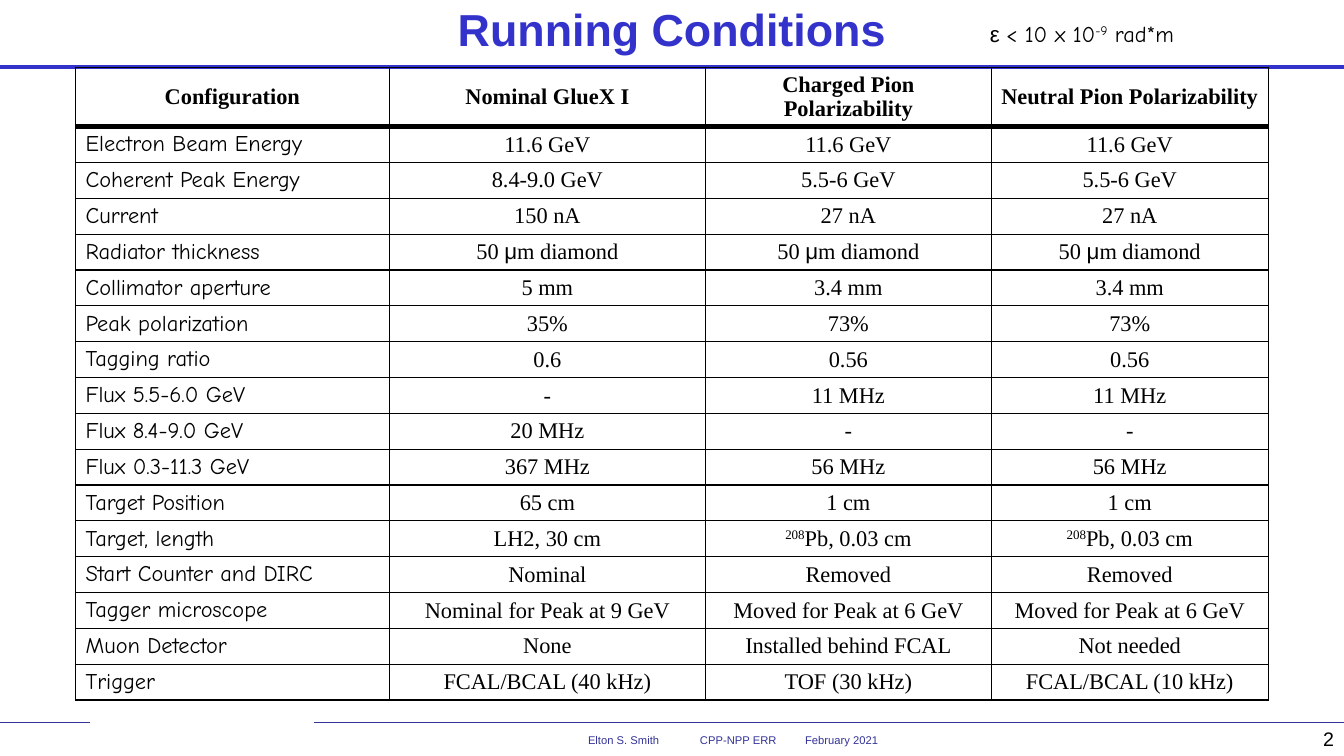
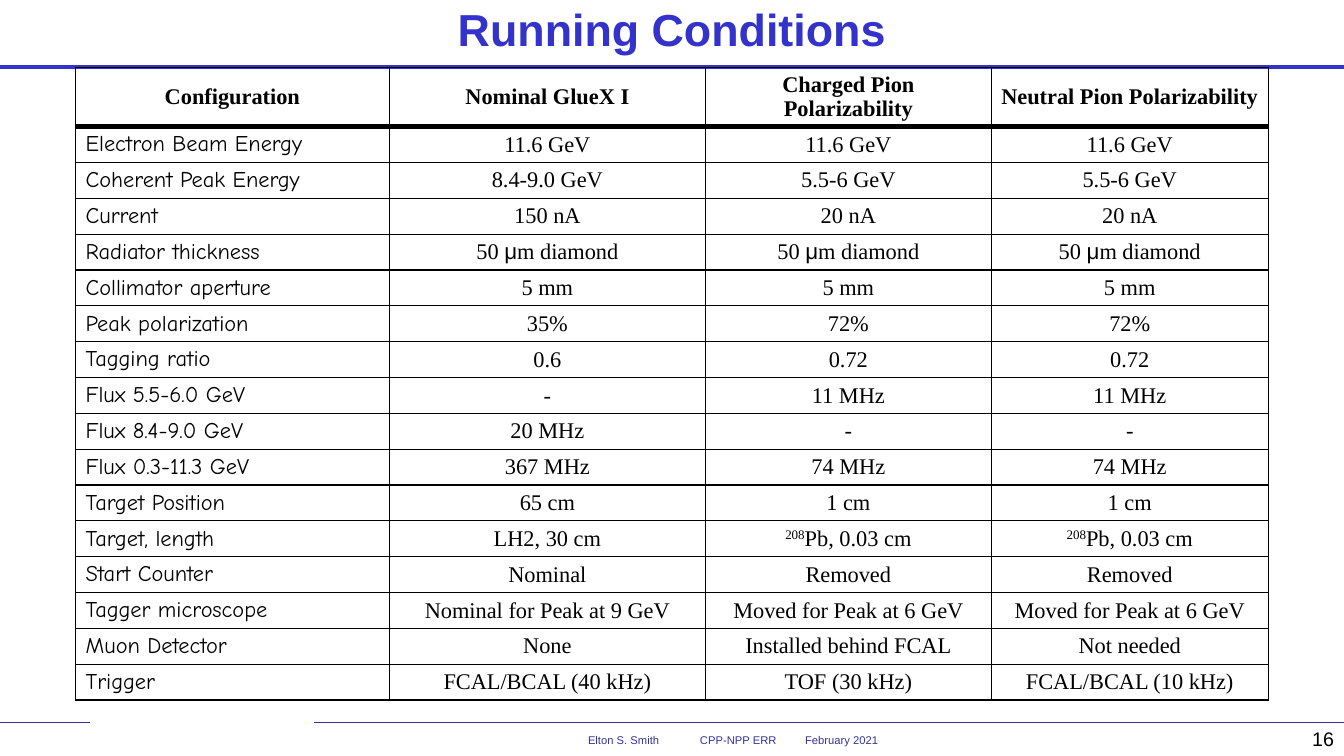
from dataclasses import dataclass

from lxml.etree import SubElement
from pptx import Presentation
from pptx.dml.color import RGBColor
from pptx.enum.shapes import MSO_CONNECTOR
from pptx.enum.text import MSO_ANCHOR, MSO_AUTO_SIZE, PP_ALIGN
from pptx.oxml.ns import qn
from pptx.util import Pt


@dataclass(frozen=True)
class Theme:
    title_blue: RGBColor = RGBColor(0x33, 0x33, 0xCC)
    footer_blue: RGBColor = RGBColor(0x33, 0x33, 0x99)
    ink: RGBColor = RGBColor(0, 0, 0)
    sans: str = "Arial"
    serif: str = "Times New Roman"
    hand: str = "Comic Neue"
    title_size: int = 32
    table_size: int = 16
    number_size: int = 14
    footer_size: int = 8
    grid_width: float = 1
    header_rule_width: float = 4.5


@dataclass(frozen=True)
class Box:
    left: float
    top: float
    width: float
    height: float

    def lengths(self):
        return [Pt(value) for value in (self.left, self.top, self.width, self.height)]


@dataclass(frozen=True)
class Piece:
    text: str
    font: str = ""
    raised: bool = False


@dataclass(frozen=True)
class PionRun:
    number: str
    current: str
    aperture: str
    polarization: str
    tagging: str
    full_flux: str
    start_counter: str
    emittance: tuple = ()


THEME = Theme()
PAGE = Box(0, 0, 960, 540)
TITLE = Box(0, -3.6, 960, 48)
EMITTANCE = Box(700, 11, 152.6, 26.6)
CONDITIONS = Box(54, 48, 852, 452.1)
FOOTER = Box(320, 520, 408, 17.3)
PAGE_NUMBER = Box(760, 516, 200, 24)

COLUMN_WIDTHS = (224, 226, 204, 198)
HEADER_HEIGHT = 42.5
HEADINGS = (
    "Configuration",
    "Nominal GlueX I",
    "Charged Pion\nPolarizability",
    "Neutral Pion Polarizability",
)
DIAMOND = (Piece("50 "), Piece("μ", THEME.sans), Piece("m diamond"))
LEAD = (Piece("208", raised=True), Piece("Pb, 0.03 cm"))
BEAM_EMITTANCE = (
    Piece("ε ", THEME.sans),
    Piece("< 10 x 10"),
    Piece("-9", raised=True),
    Piece(" rad*m"),
)
PION_RUNS = (
    PionRun("2", "27 nA", "3.4 mm", "73%", "0.56", "56 MHz",
            "Start Counter and DIRC", BEAM_EMITTANCE),
    PionRun("16", "20 nA", "5 mm", "72%", "0.72", "74 MHz", "Start Counter"),
)


def condition_rows(run):
    def pions(label, nominal, value):
        return label, nominal, value, value

    return (
        HEADINGS,
        pions("Electron Beam Energy", "11.6 GeV", "11.6 GeV"),
        pions("Coherent Peak Energy", "8.4-9.0 GeV", "5.5-6 GeV"),
        pions("Current", "150 nA", run.current),
        pions("Radiator thickness", DIAMOND, DIAMOND),
        pions("Collimator aperture", "5 mm", run.aperture),
        pions("Peak polarization", "35%", run.polarization),
        pions("Tagging ratio", "0.6", run.tagging),
        pions("Flux 5.5-6.0 GeV", "-", "11 MHz"),
        pions("Flux 8.4-9.0 GeV", "20 MHz", "-"),
        pions("Flux 0.3-11.3 GeV", "367 MHz", run.full_flux),
        pions("Target Position", "65 cm", "1 cm"),
        pions("Target, length", "LH2, 30 cm", LEAD),
        pions(run.start_counter, "Nominal", "Removed"),
        pions("Tagger microscope", "Nominal for Peak at 9 GeV", "Moved for Peak at 6 GeV"),
        ("Muon Detector", "None", "Installed behind FCAL", "Not needed"),
        ("Trigger", "FCAL/BCAL (40 kHz)", "TOF (30 kHz)", "FCAL/BCAL (10 kHz)"),
    )


def apply_format(target, values):
    for attribute, value in values.items():
        setattr(target, attribute, value)


def write(paragraph, content, font, size, color, bold=False, align=PP_ALIGN.LEFT):
    paragraph.alignment = align
    for piece in (Piece(content),) if isinstance(content, str) else content:
        run = paragraph.add_run()
        run.text = piece.text
        apply_format(run.font, {"name": piece.font or font, "size": Pt(size), "bold": bold})
        run.font.color.rgb = color
        if piece.raised:
            run.font._element.set("baseline", "30000")


def add_text_frame(slide, box, wrap=True):
    frame = slide.shapes.add_textbox(*box.lengths()).text_frame
    apply_format(frame, {"word_wrap": wrap, "auto_size": MSO_AUTO_SIZE.NONE})
    return frame


def add_rule(slide, start, end, height, color, width):
    rule = slide.shapes.add_connector(
        MSO_CONNECTOR.STRAIGHT, Pt(start), Pt(height), Pt(end), Pt(height))
    rule.line.color.rgb = color
    rule.line.width = Pt(width)
    SubElement(rule.element.spPr, qn("a:effectLst"))


def add_footer(slide, box):
    frame = add_text_frame(slide, box)
    frame.margin_left = Pt(100)
    paragraph = frame.paragraphs[0]
    tabs = SubElement(paragraph._p.get_or_add_pPr(), qn("a:tabLst"))
    for position in (80, 155):
        SubElement(tabs, qn("a:tab"), pos=str(Pt(position)), algn="l")
    write(paragraph, "Elton S. Smith\tCPP-NPP ERR\tFebruary 2021",
          THEME.sans, THEME.footer_size, THEME.footer_blue)


def furnish_layout(layout, slide):
    originals = set(shape.shape_id for shape in slide.shapes)
    for start, end in ((224, PAGE.width), (0, 64)):
        add_rule(slide, start, end, 516, THEME.footer_blue, 0.75)
    add_rule(slide, 0, PAGE.width, 48, THEME.title_blue, 3)
    add_footer(slide, FOOTER)
    shared = [shape for shape in slide.shapes if shape.shape_id not in originals]
    for shape_id, shape in enumerate(shared, start=100):
        shape.element.xpath(".//p:cNvPr")[0].set("id", str(shape_id))
        layout.shapes.element.append(shape.element)


def place_title(slide, box):
    title = slide.shapes.title
    apply_format(title, dict(zip(("left", "top", "width", "height"), box.lengths())))
    apply_format(title.text_frame, {
        "word_wrap": True,
        "auto_size": MSO_AUTO_SIZE.NONE,
        "vertical_anchor": MSO_ANCHOR.MIDDLE,
    })
    write(title.text_frame.paragraphs[0], "Running Conditions", THEME.sans,
          THEME.title_size, THEME.title_blue, True, PP_ALIGN.CENTER)


def draw_borders(cell, row):
    properties = cell._tc.get_or_add_tcPr()
    widths = {side: THEME.grid_width for side in ("lnL", "lnR", "lnT", "lnB")}
    if row < 2:
        widths["lnT" if row else "lnB"] = THEME.header_rule_width
    for side, width in widths.items():
        border = SubElement(properties, qn(f"a:{side}"), w=str(Pt(width)))
        fill = SubElement(border, qn("a:solidFill"))
        SubElement(fill, qn("a:srgbClr"), val=str(THEME.ink))
    cell.fill.background()


def fill_cell(cell, content, row, column):
    heading = row == 0
    label = column == 0 and not heading
    margin = Pt(2.5 if heading else 3.6)
    apply_format(cell, {
        "vertical_anchor": MSO_ANCHOR.MIDDLE,
        "margin_top": margin,
        "margin_bottom": margin,
    })
    lines = content.split("\n") if isinstance(content, str) else [content]
    for index, line in enumerate(lines):
        frame = cell.text_frame
        paragraph = frame.add_paragraph() if index else frame.paragraphs[0]
        write(paragraph, line, THEME.hand if label else THEME.serif, THEME.table_size,
              THEME.ink, heading, PP_ALIGN.LEFT if label else PP_ALIGN.CENTER)
    draw_borders(cell, row)


def add_conditions(slide, box, rows):
    table = slide.shapes.add_table(len(rows), len(COLUMN_WIDTHS), *box.lengths()).table
    apply_format(table, {"first_row": False, "horz_banding": False})
    for column, width in zip(table.columns, COLUMN_WIDTHS):
        column.width = Pt(width)
    row_height = (box.height - HEADER_HEIGHT) / (len(rows) - 1)
    for row, contents in enumerate(rows):
        table.rows[row].height = Pt(row_height if row else HEADER_HEIGHT)
        for column, content in enumerate(contents):
            fill_cell(table.cell(row, column), content, row, column)


def build_conditions_slide(slide, run):
    place_title(slide, TITLE)
    write(add_text_frame(slide, PAGE_NUMBER).paragraphs[0], run.number, THEME.sans,
          THEME.number_size, THEME.ink, align=PP_ALIGN.RIGHT)
    add_conditions(slide, CONDITIONS, condition_rows(run))
    if run.emittance:
        write(add_text_frame(slide, EMITTANCE, wrap=False).paragraphs[0], run.emittance,
              THEME.hand, THEME.table_size, THEME.ink)


def main():
    deck = Presentation()
    apply_format(deck, {"slide_width": Pt(PAGE.width), "slide_height": Pt(PAGE.height)})
    layout = deck.slide_layouts.get_by_name("Title Only")
    slides = [deck.slides.add_slide(layout) for _ in PION_RUNS]
    furnish_layout(layout, slides[0])
    for slide, run in zip(slides, PION_RUNS):
        build_conditions_slide(slide, run)
    deck.save("out.pptx")


if __name__ == "__main__":
    main()
